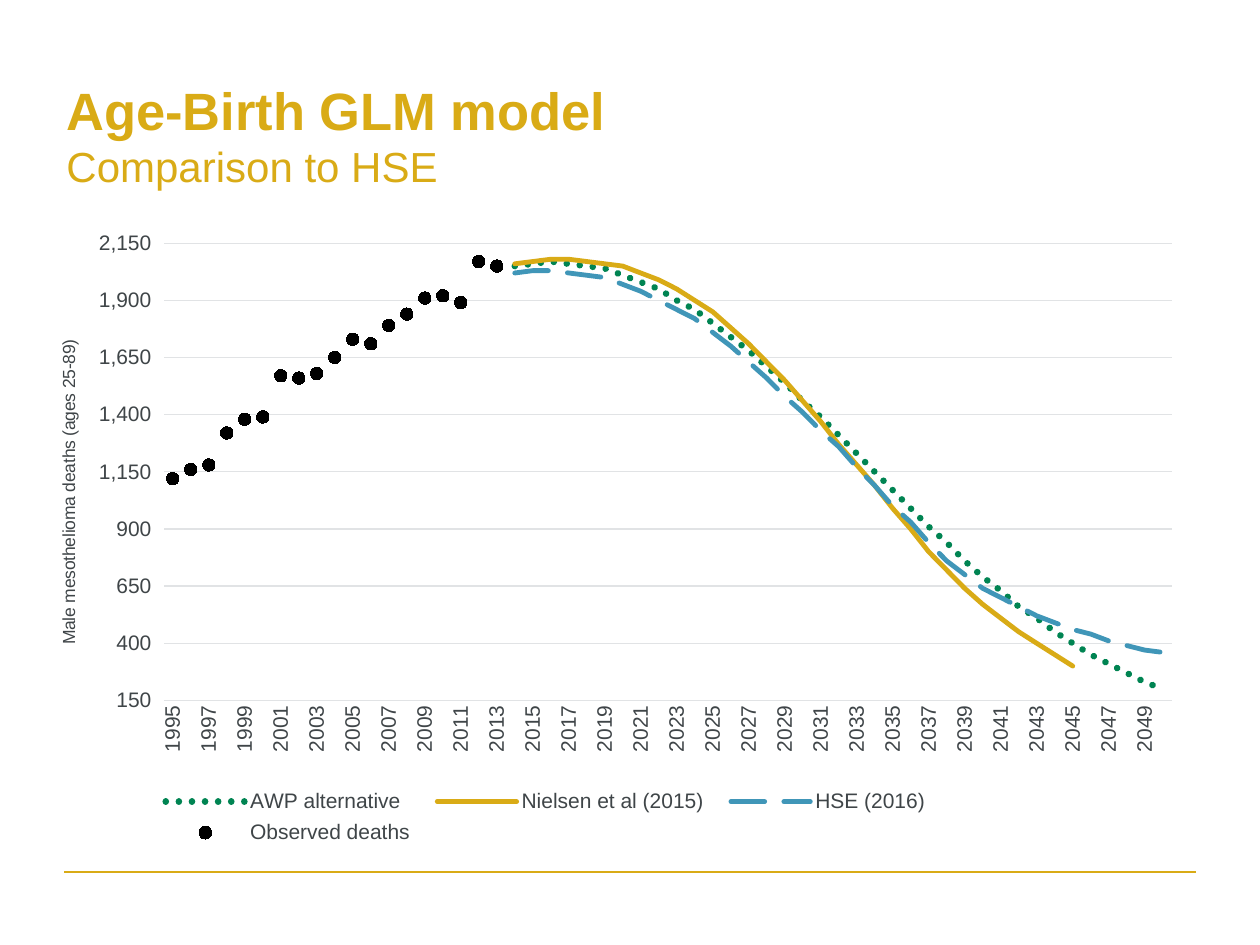
from lxml.etree import SubElement
from pptx import Presentation
from pptx.chart.data import CategoryChartData
from pptx.dml.color import RGBColor
from pptx.enum.chart import XL_CHART_TYPE, XL_LEGEND_POSITION, XL_MARKER_STYLE, XL_TICK_MARK
from pptx.enum.dml import MSO_LINE
from pptx.enum.shapes import MSO_CONNECTOR
from pptx.enum.text import MSO_ANCHOR
from pptx.oxml import parse_xml
from pptx.oxml.ns import nsdecls, qn
from pptx.util import Cm, Pt

GOLD = RGBColor(0xD9, 0xAB, 0x16)
GREEN = RGBColor(0x00, 0x84, 0x52)
BLUE = RGBColor(0x40, 0x96, 0xB8)
BLACK = RGBColor(0x00, 0x00, 0x00)
GREY = RGBColor(0x3F, 0x45, 0x48)
GRID = RGBColor(0xE1, 0xE3, 0xE5)
FONT = "Arial"

# Content
TITLE = [("Age-Birth GLM model", 30, True), ("Comparison to HSE", 24, False)]
AXIS_TITLE = "Male mesothelioma deaths (ages 25-89)"
YEARS = range(1995, 2051)
FORECAST_START = 2014

OBSERVED = ("Observed deaths", [
    1120, 1160, 1180, 1320, 1380, 1390, 1570, 1560, 1580, 1650,
    1730, 1710, 1790, 1840, 1910, 1920, 1890, 2070, 2050])

# Name, colour, line width, dash, values from FORECAST_START onwards
FORECASTS = [
    ("AWP alternative", GREEN, 3.75, MSO_LINE.ROUND_DOT, [
        2050, 2060, 2070, 2060, 2050, 2040, 2010, 1980, 1950, 1900, 1860, 1800, 1740,
        1680, 1610, 1540, 1460, 1390, 1310, 1230, 1150, 1070, 990, 910, 840, 760, 690,
        630, 560, 510, 450, 400, 350, 310, 270, 230, 200]),
    ("Nielsen et al (2015)", GOLD, 2.75, MSO_LINE.SOLID, [
        2060, 2070, 2080, 2080, 2070, 2060, 2050, 2020, 1990, 1950, 1900, 1850, 1780,
        1710, 1630, 1550, 1460, 1370, 1270, 1180, 1090, 990, 900, 800, 720, 640, 570,
        510, 450, 400, 350, 300]),
    ("HSE (2016)", BLUE, 2.75, MSO_LINE.LONG_DASH, [
        2020, 2030, 2030, 2020, 2010, 2000, 1970, 1940, 1900, 1860, 1820, 1760, 1700,
        1630, 1560, 1480, 1410, 1330, 1260, 1170, 1090, 1000, 930, 840, 760, 700, 640,
        600, 560, 520, 490, 460, 440, 410, 390, 370, 360]),
]


def style(font, size, color=GREY, bold=False):
    font.name, font.size, font.bold = FONT, Pt(size), bold
    font.color.rgb = color


def set_layout(parent, index, box, inner=False):
    """Place a chart part by fractions of the chart: left, top, width, height."""
    for old in parent.findall(qn("c:layout")):
        parent.remove(old)
    target = '<c:layoutTarget val="inner"/>' if inner else ""
    modes = '<c:xMode val="edge"/><c:yMode val="edge"/>'
    sizes = "".join(f'<c:{k} val="{v}"/>' for k, v in zip("xywh", box))
    parent.insert(index, parse_xml(
        f'<c:layout {nsdecls("c")}><c:manualLayout>{target}{modes}{sizes}'
        "</c:manualLayout></c:layout>"))


prs = Presentation()
prs.slide_width, prs.slide_height = Cm(25.4), Cm(19.05)
s = prs.slides.add_slide(prs.slide_layouts[6])

# Footer rule
rule = s.shapes.add_connector(MSO_CONNECTOR.STRAIGHT, Cm(1.3), Cm(17.58), Cm(24.1), Cm(17.58))
rule.line.color.rgb = GOLD
rule.line.width = Pt(1)
SubElement(rule._element.spPr, qn("a:effectLst"))

# Title
tf = s.shapes.add_textbox(Cm(1.09), Cm(1.12), Cm(23.04), Cm(3.18)).text_frame
tf.word_wrap = True
tf.vertical_anchor = MSO_ANCHOR.MIDDLE
p = tf.paragraphs[0]
for i, (text, size, bold) in enumerate(TITLE):
    if i:
        p.add_line_break()
    r = p.add_run()
    r.text = text
    style(r.font, size, GOLD, bold)

# Chart
data = CategoryChartData(number_format="#,##0")
data.categories = [str(year) for year in YEARS]
lead = [None] * (FORECAST_START - YEARS[0])
for name, values in [(f[0], lead + f[-1]) for f in FORECASTS] + [OBSERVED]:
    data.add_series(name, values + [None] * (len(YEARS) - len(values)))
chart = s.shapes.add_chart(
    XL_CHART_TYPE.LINE_MARKERS, Cm(1.09), Cm(4.32), Cm(23.04), Cm(13), data).chart
chart.has_title = False
style(chart.font, 10)
plot_area = chart._chartSpace.chart.plotArea
set_layout(plot_area, 0, (0.096, 0.045, 0.882, 0.709), inner=True)

# Series
*forecast_series, observed = chart.plots[0].series
for series, (_, color, width, dash, _) in zip(forecast_series, FORECASTS):
    series.smooth = False
    series.marker.style = XL_MARKER_STYLE.NONE
    line = series.format.line
    line.color.rgb, line.width, line.dash_style = color, Pt(width), dash
    series._element.spPr.find(qn("a:ln")).set("cap", "rnd")
observed.smooth = False
observed.format.line.fill.background()
marker = observed.marker
marker.style, marker.size = XL_MARKER_STYLE.CIRCLE, 7
marker.format.fill.solid()
marker.format.fill.fore_color.rgb = BLACK
marker.format.line.color.rgb = BLACK

# Category axis: every second year, turned upright
years = chart.category_axis
years.major_tick_mark = XL_TICK_MARK.NONE
years.format.line.color.rgb = GRID
years.format.line.width = Pt(0.75)
style(years.tick_labels.font, 12)
axis = years._element
axis.find(qn("c:txPr")).find(qn("a:bodyPr")).set("rot", "-5400000")
axis.find(qn("c:noMultiLvlLbl")).addprevious(
    parse_xml(f'<c:tickLblSkip {nsdecls("c")} val="2"/>'))

# Value axis
deaths = chart.value_axis
deaths.minimum_scale, deaths.maximum_scale, deaths.major_unit = 150, 2150, 250
deaths.major_tick_mark = XL_TICK_MARK.OUTSIDE
deaths.format.line.fill.background()
deaths.major_gridlines.format.line.color.rgb = GRID
deaths.major_gridlines.format.line.width = Pt(0.75)
deaths.tick_labels.number_format = "#,##0"
deaths.tick_labels.number_format_is_linked = False
style(deaths.tick_labels.font, 12)
p = deaths.axis_title.text_frame.paragraphs[0]
p.text = AXIS_TITLE
style(p.font, 10)

# Legend
chart.has_legend = True
legend = chart.legend
legend.position = XL_LEGEND_POSITION.BOTTOM
legend.include_in_layout = False
style(legend.font, 12)
set_layout(legend._element, 1, (0.08, 0.88, 0.7, 0.11))

prs.save("out.pptx")
